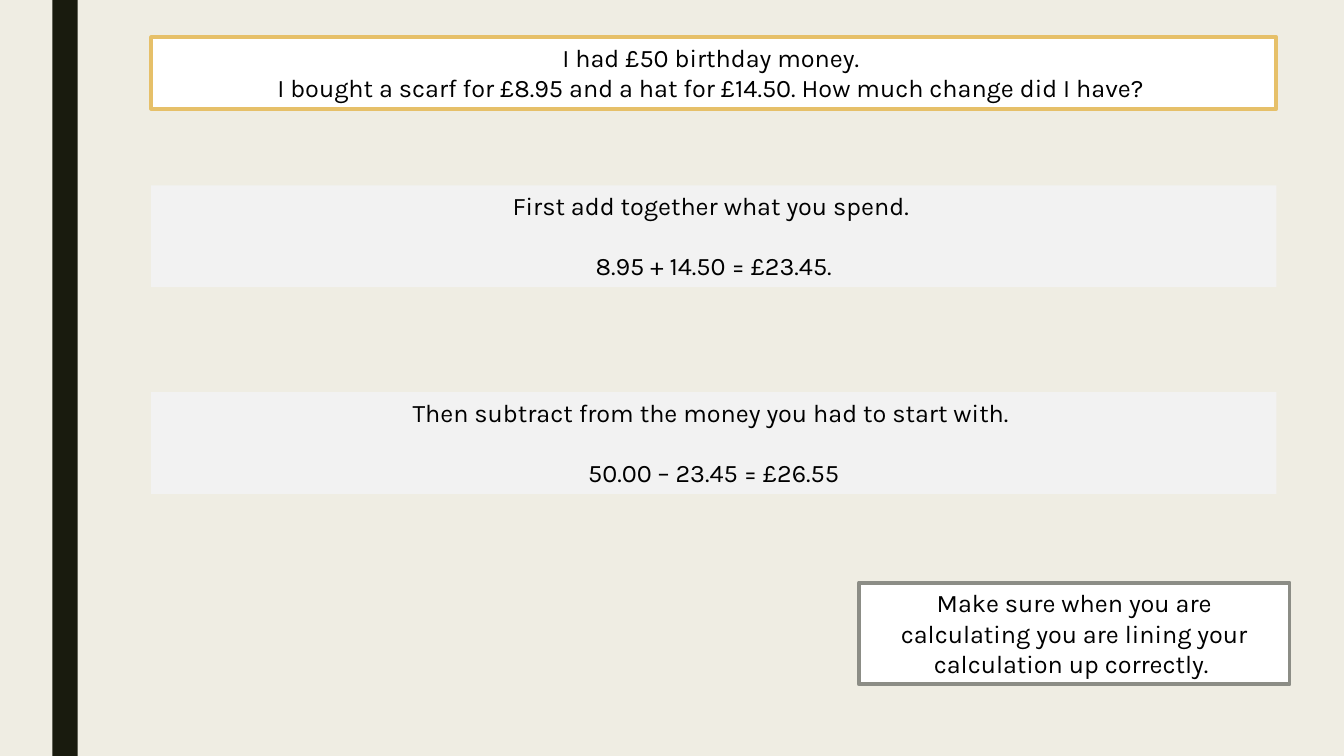
from pptx import Presentation
from pptx.dml.color import RGBColor as RGB
from pptx.enum.shapes import MSO_SHAPE as Shape
from pptx.enum.text import MSO_ANCHOR as Anchor, PP_ALIGN as Align
from pptx.util import Inches, Pt

COLORS = {
    "back": "EFEDE3",
    "bar": "191B0E",
    "white": "FFFFFF",
    "pale": "F2F2F2",
    "gold": "E6C069",
    "gray": "8C8D86",
    "text": "000000",
}


def color(name):
    return RGB.from_string(COLORS[name])


def add_box(left, top, width, height, fill, line=None):
    box = slide.shapes.add_shape(
        Shape.RECTANGLE, Inches(left), Inches(top), Inches(width), Inches(height)
    )
    box.shadow.inherit = False
    box.fill.solid()
    box.fill.fore_color.rgb = color(fill)
    if line:
        box.line.color.rgb = color(line)
        box.line.width = Pt(2.75)
    else:
        box.line.fill.background()
    return box


deck = Presentation()
deck.slide_width = Inches(13.33)
deck.slide_height = Inches(7.5)
slide = deck.slides.add_slide(deck.slide_layouts[6])
slide.background.fill.solid()
slide.background.fill.fore_color.rgb = color("back")

add_box(0.52, 0, 0.25, 7.5, "bar")

LEFT, WIDTH, HEIGHT = 1.5, 11.16, 1.01
GAP = 21.5

panels = [
    (LEFT, 0.37, WIDTH, 0.71, "white", "gold", 0, [
        "I had £50 birthday money. ",
        "I bought a scarf for £8.95 and a hat for £14.50. How much change did I have? ",
    ]),
    (LEFT, 1.84, WIDTH, HEIGHT, "pale", None, GAP, [
        "First add together what you spend. ",
        "8.95 + 14.50 = £23.45.",
    ]),
    (LEFT, 3.89, WIDTH, HEIGHT, "pale", None, GAP, [
        "Then subtract from the money you had to start with. ",
        "50.00 – 23.45 = £26.55",
    ]),
    (8.52, 5.78, 4.27, HEIGHT, "white", "gray", 0, [
        "Make sure when you are calculating you are lining your calculation up correctly. ",
    ]),
]

for left, top, width, height, fill, line, gap, texts in panels:
    frame = add_box(left, top, width, height, fill, line).text_frame
    frame.word_wrap = True
    frame.vertical_anchor = Anchor.TOP
    for i, text in enumerate(texts):
        para = frame.add_paragraph() if i else frame.paragraphs[0]
        para.text = text
        para.alignment = Align.CENTER
        if i and gap:
            para.space_before = Pt(gap)
        para.font.name = "Karla"
        para.font.size = Pt(18)
        para.font.color.rgb = color("text")

deck.save("out.pptx")
